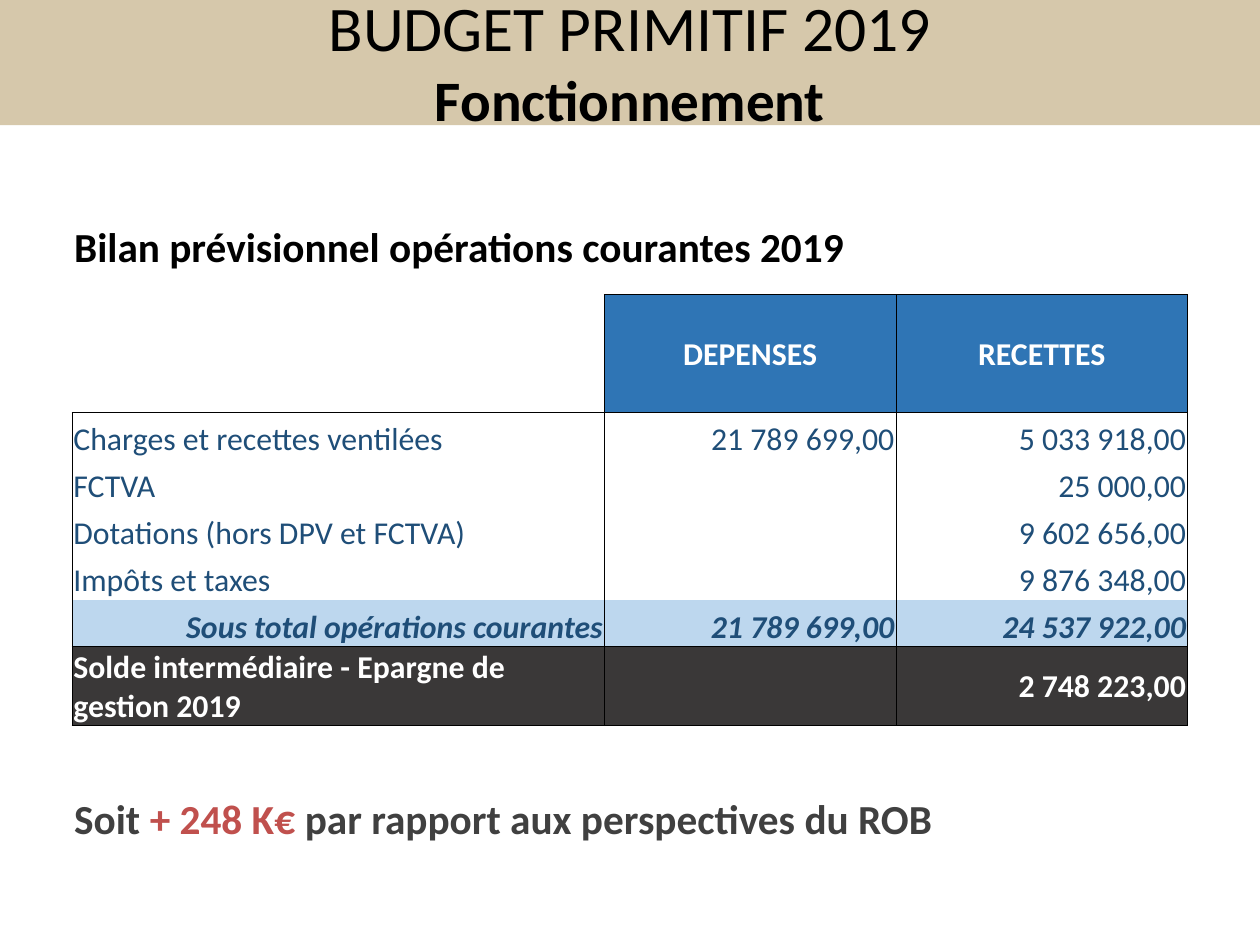
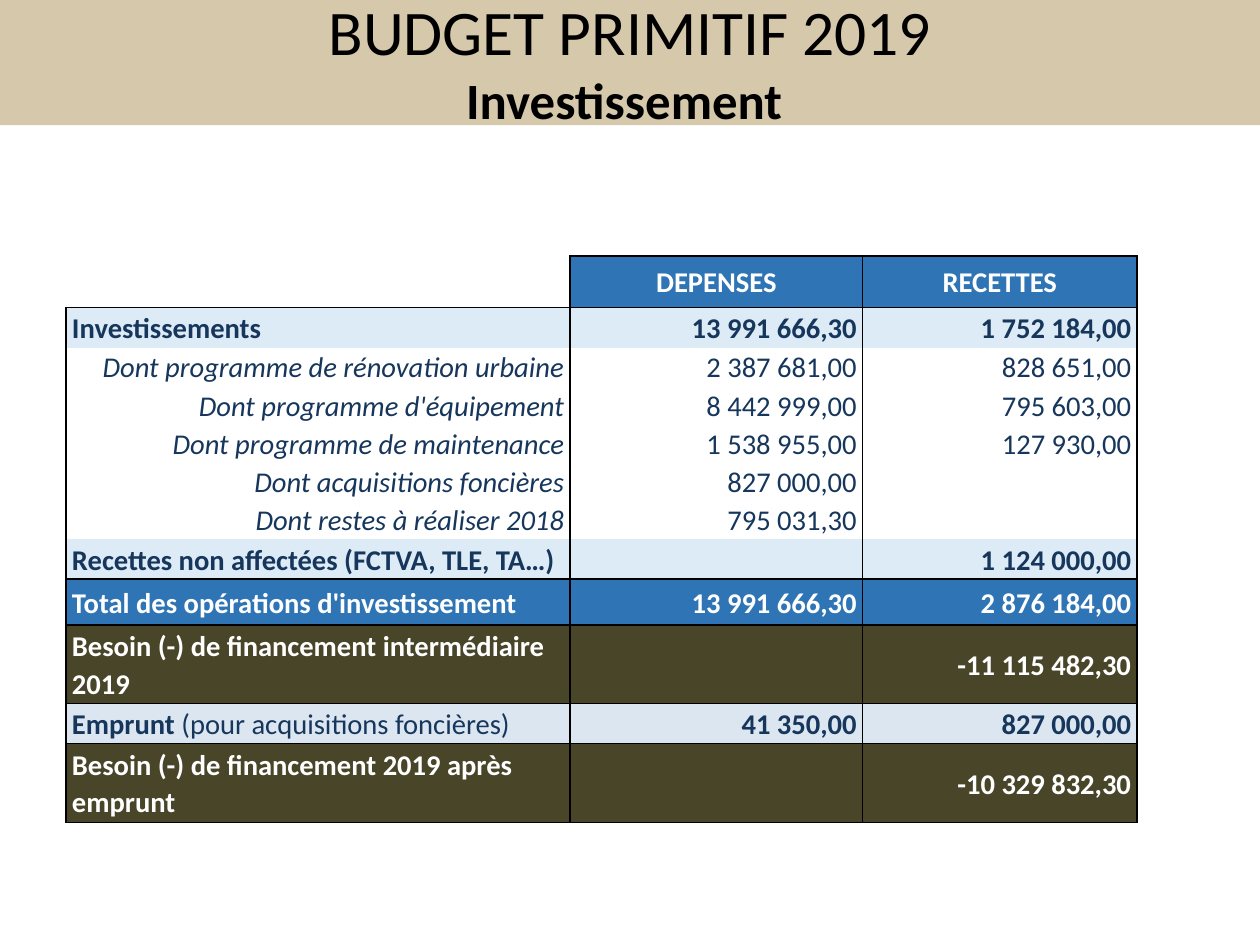
from dataclasses import dataclass

from lxml.etree import SubElement
from pptx import Presentation
from pptx.dml.color import RGBColor
from pptx.enum.shapes import MSO_SHAPE
from pptx.enum.text import MSO_ANCHOR, MSO_AUTO_SIZE, PP_ALIGN
from pptx.oxml.ns import qn
from pptx.util import Cm, Pt

FONT = "Calibri"
BLACK, WHITE, BAND = "000000", "FFFFFF", "D6C8AB"
BLUE, STEEL, NAVY = "2F75B5", "1F4E78", "16365C"
GREY, RED = "404040", "C0504D"


@dataclass
class RowStyle:
    fill: str
    color: str
    bold: bool = True
    italic: bool = False
    label_italic: bool = False
    label_align: PP_ALIGN = PP_ALIGN.LEFT
    boxed: bool = False
    anchor: MSO_ANCHOR = MSO_ANCHOR.MIDDLE


HEADER = RowStyle(BLUE, WHITE, boxed=True)
CURRENT = RowStyle(WHITE, STEEL, bold=False, anchor=MSO_ANCHOR.BOTTOM)
SUBTOTAL = RowStyle("BDD7EE", STEEL, italic=True, label_italic=True,
                    label_align=PP_ALIGN.RIGHT, anchor=MSO_ANCHOR.BOTTOM)
BALANCE = RowStyle("3A3838", WHITE, boxed=True)
GROUP = RowStyle("DDEBF7", NAVY)
DETAIL = RowStyle(WHITE, NAVY, bold=False, label_italic=True, label_align=PP_ALIGN.RIGHT)
TOTAL = RowStyle(BLUE, WHITE, boxed=True)
NEED = RowStyle("494529", WHITE, boxed=True)
LOAN = RowStyle("DCE6F1", NAVY, boxed=True)

# Each row: style, height in cm, label, expenses, receipts
OPERATING = {
    "left": 1.6, "top": 6.55, "columns": (11.83, 6.48, 6.48),
    "size": 20, "spacing": 1, "line": 0.5, "insets": (0.03, 0.03),
    "rows": [
        (HEADER, 2.62, "", "DEPENSES", "RECETTES"),
        (CURRENT, 1.04, "Charges et recettes ventilées", "21 789 699,00", "5 033 918,00"),
        (CURRENT, 1.04, "FCTVA", "", "25 000,00"),
        (CURRENT, 1.04, "Dotations (hors DPV et FCTVA)", "", "9 602 656,00"),
        (CURRENT, 1.04, "Impôts et taxes", "", "9 876 348,00"),
        (SUBTOTAL, 1.04, "Sous total opérations courantes", "21 789 699,00", "24 537 922,00"),
        (BALANCE, 1.75, "Solde intermédiaire - Epargne de gestion 2019", "", "2 748 223,00"),
    ],
}
INVESTMENT = {
    "left": 1.47, "top": 5.69, "columns": (11.2, 6.5, 6.1),
    "size": 18, "spacing": 1.07, "line": 1, "insets": (0.13, 0),
    "rows": [
        (HEADER, 1.15, "", "DEPENSES", "RECETTES"),
        (GROUP, 0.89, "Investissements", "13 991 666,30", "1 752 184,00"),
        (DETAIL, 0.85, "Dont programme de rénovation urbaine", "2 387 681,00", "828 651,00"),
        (DETAIL, 0.85, "Dont programme d'équipement", "8 442 999,00", "795 603,00"),
        (DETAIL, 0.85, "Dont programme de maintenance", "1 538 955,00", "127 930,00"),
        (DETAIL, 0.85, "Dont acquisitions foncières", "827 000,00", ""),
        (DETAIL, 0.85, "Dont restes à réaliser 2018", "795 031,30", ""),
        (GROUP, 0.89, "Recettes non affectées (FCTVA, TLE, TA…)", "", "1 124 000,00"),
        (TOTAL, 1.02, "Total des opérations d'investissement", "13 991 666,30", "2 876 184,00"),
        (NEED, 1.75, "Besoin (-) de financement intermédiaire 2019", "", "-11 115 482,30"),
        (LOAN, 0.89, [("Emprunt ", {}), ("(pour acquisitions foncières)", {"bold": False})],
         "41 350,00", "827 000,00"),
        (NEED, 1.75, "Besoin (-) de financement 2019 après emprunt", "", "-10 329 832,30"),
    ],
}
# Each remark: top in cm, runs
REMARKS = [
    (4.79, "Bilan prévisionnel opérations courantes 2019"),
    (17.5, [("Soit ", {"color": GREY}), ("+ 248 K€ ", {"color": RED}),
            ("par rapport aux perspectives du ROB", {"color": GREY})]),
]
SLIDES = [
    {"section": "Fonctionnement", "section_size": 36, "table": OPERATING, "remarks": REMARKS},
    {"section": "Investissement ", "section_size": 32, "table": INVESTMENT, "remarks": []},
]


def rgb(color):
    return RGBColor.from_string(color)


def write(frame, *lines, align=PP_ALIGN.LEFT, spacing=1, **font_format):
    """Fill a frame; a line is a string or a list of (text, format overrides)."""
    frame.word_wrap = True
    for number, line in enumerate(lines):
        paragraph = frame.add_paragraph() if number else frame.paragraphs[0]
        paragraph.alignment = align
        paragraph.line_spacing = spacing
        runs = [(line, {})] if isinstance(line, str) else line
        for text, overrides in runs:
            if not text:
                continue
            look = {"color": BLACK, "bold": False, "italic": False} | font_format | overrides
            run = paragraph.add_run()
            run.text = text
            font = run.font
            font.name, font.size = FONT, Pt(look["size"])
            font.bold, font.italic = look["bold"], look["italic"]
            font.color.rgb = rgb(look["color"])


def set_borders(cell, sides, width):
    """Draw the given sides (letters of LRTB) and clear the others."""
    properties = cell._tc.get_or_add_tcPr()
    for position, side in enumerate("LRTB"):
        line = SubElement(properties, qn(f"a:ln{side}"), w=str(Pt(width)))
        properties.insert(position, line)
        if side in sides:
            fill = SubElement(line, qn("a:solidFill"))
            SubElement(fill, qn("a:srgbClr"), val=BLACK)
        else:
            SubElement(line, qn("a:noFill"))


def add_budget(slide, budget):
    rows, widths = budget["rows"], budget["columns"]
    heights = [row[1] for row in rows]
    table = slide.shapes.add_table(
        len(rows), len(widths), Cm(budget["left"]), Cm(budget["top"]),
        Cm(sum(widths)), Cm(sum(heights))).table
    table.first_row = table.horz_banding = False
    for column, width in zip(table.columns, widths):
        column.width = Cm(width)
    side_inset, top_inset = budget["insets"]
    boxed = [row[0].boxed for row in rows] + [False]
    for r, (style, height, *entries) in enumerate(rows):
        table.rows[r].height = Cm(height)
        sides = "LR"
        sides += "T" if boxed[r] or boxed[r - 1] else ""
        sides += "B" if boxed[r] or boxed[r + 1] else ""
        for c, entry in enumerate(entries):
            cell = table.cell(r, c)
            corner = r == 0 and c == 0
            cell.margin_left = cell.margin_right = Cm(side_inset)
            cell.margin_top, cell.margin_bottom = Cm(top_inset), 0
            cell.vertical_anchor = style.anchor
            cell.fill.solid()
            cell.fill.fore_color.rgb = rgb(WHITE if corner else style.fill)
            set_borders(cell, "RB" if corner else sides, budget["line"])
            align = style.label_align if c == 0 else PP_ALIGN.RIGHT
            write(cell.text_frame, entry, size=budget["size"], color=style.color,
                  bold=style.bold, italic=style.italic if c else style.label_italic,
                  align=PP_ALIGN.CENTER if r == 0 else align, spacing=budget["spacing"])


def move_band_to_layout(slide, layout):
    """Draw the title band once, behind the placeholders of the layout."""
    band = slide.shapes.add_shape(MSO_SHAPE.RECTANGLE, Cm(-0.1), 0, Cm(28.12), Cm(2.78))
    band.shadow.inherit = False
    band.fill.solid()
    band.fill.fore_color.rgb = rgb(BAND)
    band.line.fill.background()
    band._element.nvSpPr.cNvPr.set("id", "20")
    layout.shapes._spTree.insert(2, band._element)


def set_title(slide, section, section_size):
    title = slide.shapes.title
    title.left, title.top, title.width, title.height = Cm(1.4), 0, Cm(25.2), Cm(2.7)
    frame = title.text_frame
    frame.auto_size = MSO_AUTO_SIZE.NONE
    frame.vertical_anchor = MSO_ANCHOR.MIDDLE
    write(frame, "BUDGET PRIMITIF 2019",
          [(section, {"size": section_size, "bold": True})],
          size=40, align=PP_ALIGN.CENTER)


def main():
    deck = Presentation()
    deck.slide_width, deck.slide_height = Cm(28), Cm(21)
    layout = deck.slide_layouts[5]
    for number, content in enumerate(SLIDES):
        slide = deck.slides.add_slide(layout)
        if number == 0:
            move_band_to_layout(slide, layout)
        set_title(slide, content["section"], content["section_size"])
        add_budget(slide, content["table"])
        for top, remark in content["remarks"]:
            box = slide.shapes.add_textbox(Cm(1.4), Cm(top), Cm(25.2), Cm(1.4))
            write(box.text_frame, remark, size=26, bold=True)
    deck.save("out.pptx")


if __name__ == "__main__":
    main()
